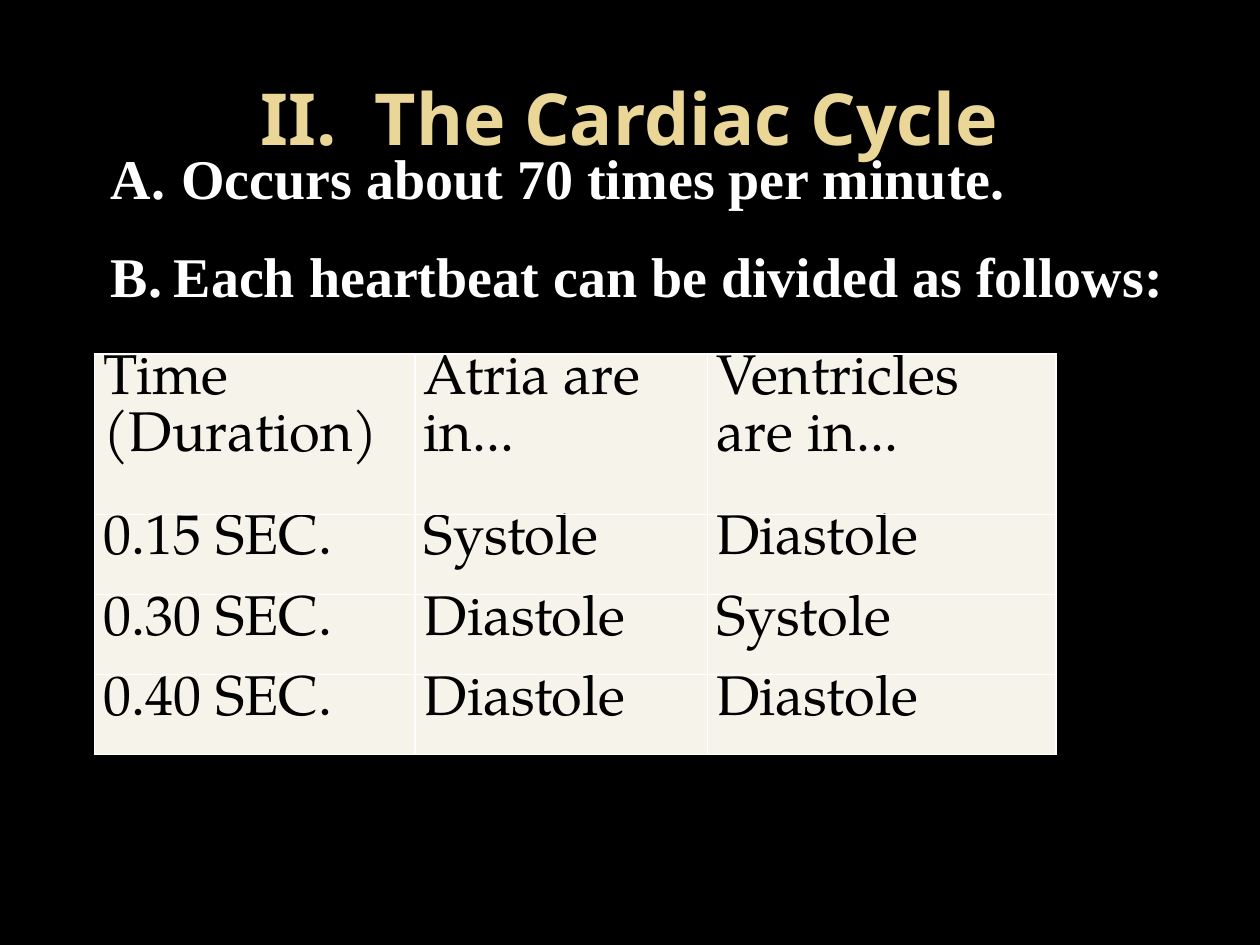
from lxml.etree import SubElement
from pptx import Presentation
from pptx.dml.color import RGBColor
from pptx.enum.text import MSO_ANCHOR, MSO_AUTO_SIZE, PP_ALIGN
from pptx.oxml.ns import qn
from pptx.util import Emu, Inches, Pt

BLACK = RGBColor(0x00, 0x00, 0x00)
WHITE = RGBColor(0xFF, 0xFF, 0xFF)
GOLD = RGBColor(0xEA, 0xD6, 0x96)
CREAM = RGBColor(0xF6, 0xF3, 0xEA)

TITLE_FONT, LIST_FONT, TABLE_FONT = "Noto Sans", "Times New Roman", "TeX Gyre Pagella"
TITLE_SIZE, TEXT_SIZE = 41, 32

# Each item: text, automatic letter or not, left margin, first-line indent
ITEMS = [
    ("Occurs about 70 times per minute.", True, 1.06, -0.56),
    ("B.\tEach heartbeat can be divided as follows:", False, 0, 0.5),
]
PHASES = [
    ("Time (Duration)", "Atria are in...", "Ventricles are in..."),
    ("0.15 SEC.", "Systole", "Diastole"),
    ("0.30 SEC.", "Diastole", "Systole"),
    ("0.40 SEC.", "Diastole", "Diastole"),
]


class CardiacPage:
    def __init__(self, deck):
        self.deck = deck
        self.page = deck.slides.add_slide(deck.slide_layouts[1])
        fill = self.page.background.fill
        fill.solid()
        fill.fore_color.rgb = BLACK

    def area(self, left, top, width, height):
        """Turn shares of the slide's size into lengths."""
        wide, high = self.deck.slide_width, self.deck.slide_height
        return [Emu(round(share * side)) for share, side in
                zip((left, top, width, height), (wide, high, wide, high))]

    def place(self, box, shares):
        box.left, box.top, box.width, box.height = self.area(*shares)
        frame = box.text_frame
        frame.word_wrap = True
        frame.auto_size = MSO_AUTO_SIZE.NONE
        frame.vertical_anchor = MSO_ANCHOR.MIDDLE
        return frame

    def style(self, para, name, size, color, bold=False):
        font = para.font
        font.name, font.size, font.bold = name, Pt(size), bold
        font.color.rgb = color

    def title(self, text, shares):
        frame = self.place(self.page.shapes.title, shares)
        frame.text = text
        para = frame.paragraphs[0]
        para.alignment = PP_ALIGN.CENTER
        self.style(para, TITLE_FONT, TITLE_SIZE, GOLD, bold=True)

    def lettered_list(self, items, shares, gap):
        frame = self.place(self.page.placeholders[1], shares)
        frame.text = "\n".join(item[0] for item in items)
        for index, (para, item) in enumerate(zip(frame.paragraphs, items)):
            _, lettered, margin, indent = item
            para.space_before = Pt(gap if index else 0)
            props = para._p.get_or_add_pPr()
            props.set("marL", str(Inches(margin)))
            props.set("indent", str(Inches(indent)))
            if lettered:
                SubElement(props, qn("a:buFont"), typeface=LIST_FONT)
                SubElement(props, qn("a:buAutoNum"), type="alphaUcPeriod")
            else:
                SubElement(props, qn("a:buNone"))
            self.style(para, LIST_FONT, TEXT_SIZE, WHITE, bold=True)

    def border(self, cell):
        props = cell._tc.get_or_add_tcPr()
        for index, side in enumerate(("lnL", "lnR", "lnT", "lnB")):
            line = props.makeelement(qn(f"a:{side}"), {"w": str(Pt(1))})
            fill = SubElement(line, qn("a:solidFill"))
            SubElement(fill, qn("a:srgbClr"), val=str(WHITE))
            props.insert(index, line)

    def table(self, rows, shares, column_parts, row_parts):
        left, top, width, height = self.area(*shares)
        table = self.page.shapes.add_table(
            len(rows), len(rows[0]), left, top, width, height).table
        table.first_row = table.horz_banding = False
        for column, part in zip(table.columns, column_parts):
            column.width = Emu(round(width * part / sum(column_parts)))
        for row, part, texts in zip(table.rows, row_parts, rows):
            row.height = Emu(round(height * part / sum(row_parts)))
            for cell, text in zip(row.cells, texts):
                cell.text = text
                cell.margin_left = cell.margin_right = Inches(0.07)
                cell.margin_top = cell.margin_bottom = 0
                cell.fill.solid()
                cell.fill.fore_color.rgb = CREAM
                self.border(cell)
                self.style(cell.text_frame.paragraphs[0], TABLE_FONT, TEXT_SIZE, BLACK)


def main():
    deck = Presentation()
    deck.slide_width, deck.slide_height = Inches(10), Inches(7.5)
    page = CardiacPage(deck)
    page.title("II.  The Cardiac Cycle", (0.05, 0.04, 0.9, 1 / 6))
    page.lettered_list(ITEMS, (0.028, 1.09 / 7.5, 0.914, 1.41 / 7.5), gap=18)
    page.table(PHASES, (0.075, 2.81 / 7.5, 0.763, 3.18 / 7.5),
               column_parts=(2.54, 2.32, 2.76), row_parts=(2, 1, 1, 1))
    deck.save("out.pptx")


if __name__ == "__main__":
    main()
